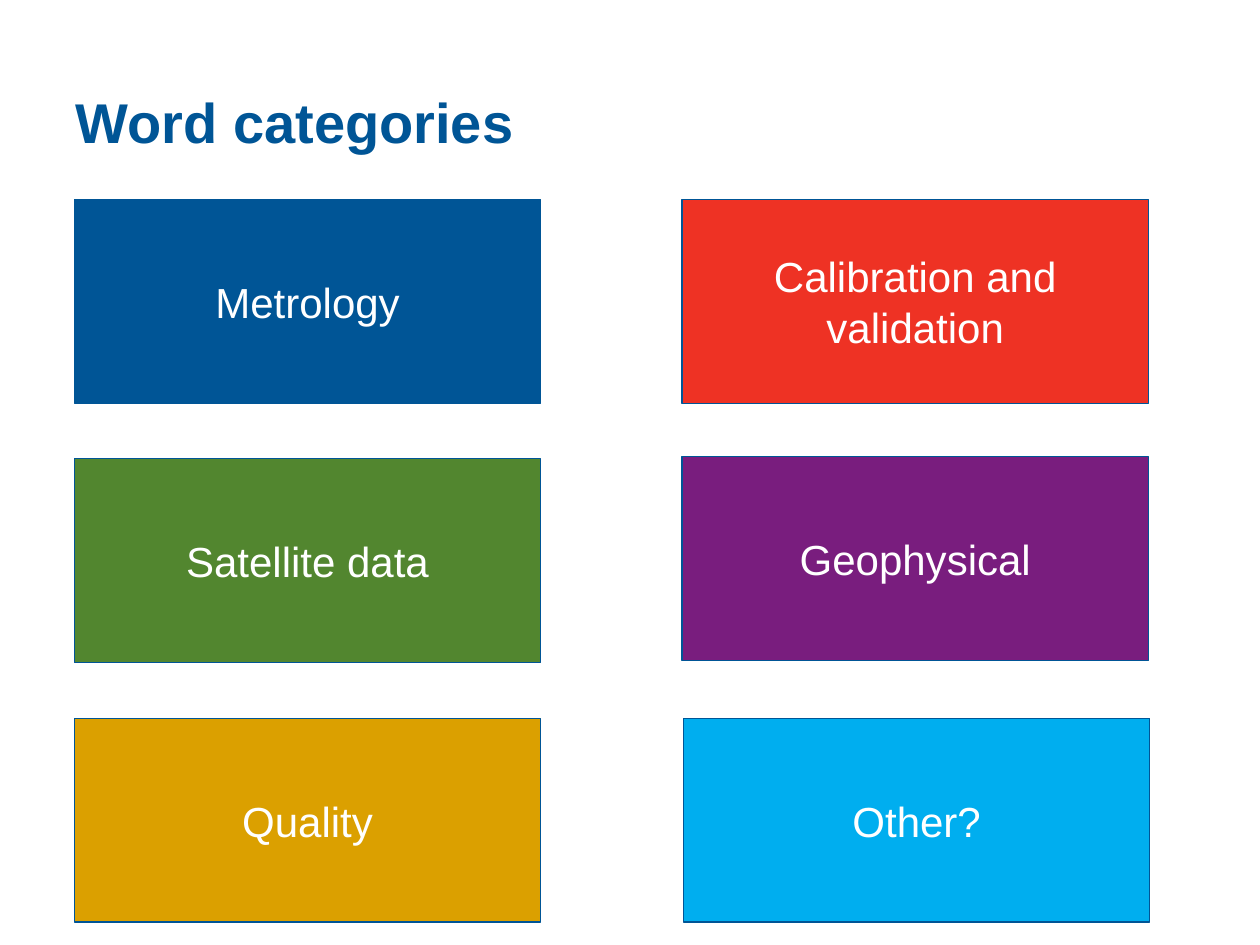
"""Build a slide that shows six word categories as a grid of coloured boxes."""

from dataclasses import dataclass

from pptx import Presentation
from pptx.dml.color import RGBColor as Rgb
from pptx.enum.shapes import MSO_SHAPE as Shape
from pptx.enum.text import MSO_ANCHOR as Anchor, PP_ALIGN as Align
from pptx.util import Cm, Pt

TITLE = "Word categories"
CATEGORIES = [
    ("Metrology", "005596", (0, 0)),
    ("Calibration and validation", "EE3224", (0, 0)),
    ("Satellite data", "52862F", (0, 0)),
    ("Geophysical", "791D7E", (0, -0.04)),
    ("Quality", "DBA000", (0, 0)),
    ("Other?", "00AEEF", (0.03, 0)),
]
COLUMNS = 2
GRID_LEFT, GRID_TOP = 1.5, 4.02
COLUMN_STEP, ROW_STEP = 12.25, 5.23
BOX_WIDTH, BOX_HEIGHT = 9.4, 4.11


@dataclass(frozen=True)
class Theme:
    font: str = "Arial"
    accent: str = "005596"
    label: str = "FFFFFF"
    title_size: int = 32
    label_size: int = 24
    line_width: float = 0.75


THEME = Theme()


def write(shape, text, size, color, align, bold=False):
    frame = shape.text_frame
    frame.word_wrap = True
    frame.vertical_anchor = Anchor.MIDDLE
    para = frame.paragraphs[0]
    para.text = text
    para.alignment = align
    para.font.name = THEME.font
    para.font.size = Pt(size)
    para.font.bold = bold
    para.font.color.rgb = Rgb.from_string(color)


def add_title(page):
    title = page.shapes.title
    title.left, title.top = Cm(1.27), Cm(0.85)
    title.width, title.height = Cm(14.63), Cm(3.18)
    write(title, TITLE, THEME.title_size, THEME.accent, Align.LEFT, bold=True)


def add_category(page, index, name, fill, nudge):
    row, column = divmod(index, COLUMNS)
    shift_x, shift_y = nudge
    box = page.shapes.add_shape(
        Shape.RECTANGLE,
        Cm(GRID_LEFT + column * COLUMN_STEP + shift_x),
        Cm(GRID_TOP + row * ROW_STEP + shift_y),
        Cm(BOX_WIDTH),
        Cm(BOX_HEIGHT),
    )
    box.shadow.inherit = False
    box.fill.solid()
    box.fill.fore_color.rgb = Rgb.from_string(fill)
    box.line.color.rgb = Rgb.from_string(THEME.accent)
    box.line.width = Pt(THEME.line_width)
    write(box, name, THEME.label_size, THEME.label, Align.CENTER)


def main():
    deck = Presentation()
    deck.slide_width, deck.slide_height = Cm(25.4), Cm(19.05)
    page = deck.slides.add_slide(deck.slide_layouts.get_by_name("Title Only"))
    add_title(page)
    for index, (name, fill, nudge) in enumerate(CATEGORIES):
        add_category(page, index, name, fill, nudge)
    deck.save("out.pptx")


if __name__ == "__main__":
    main()
